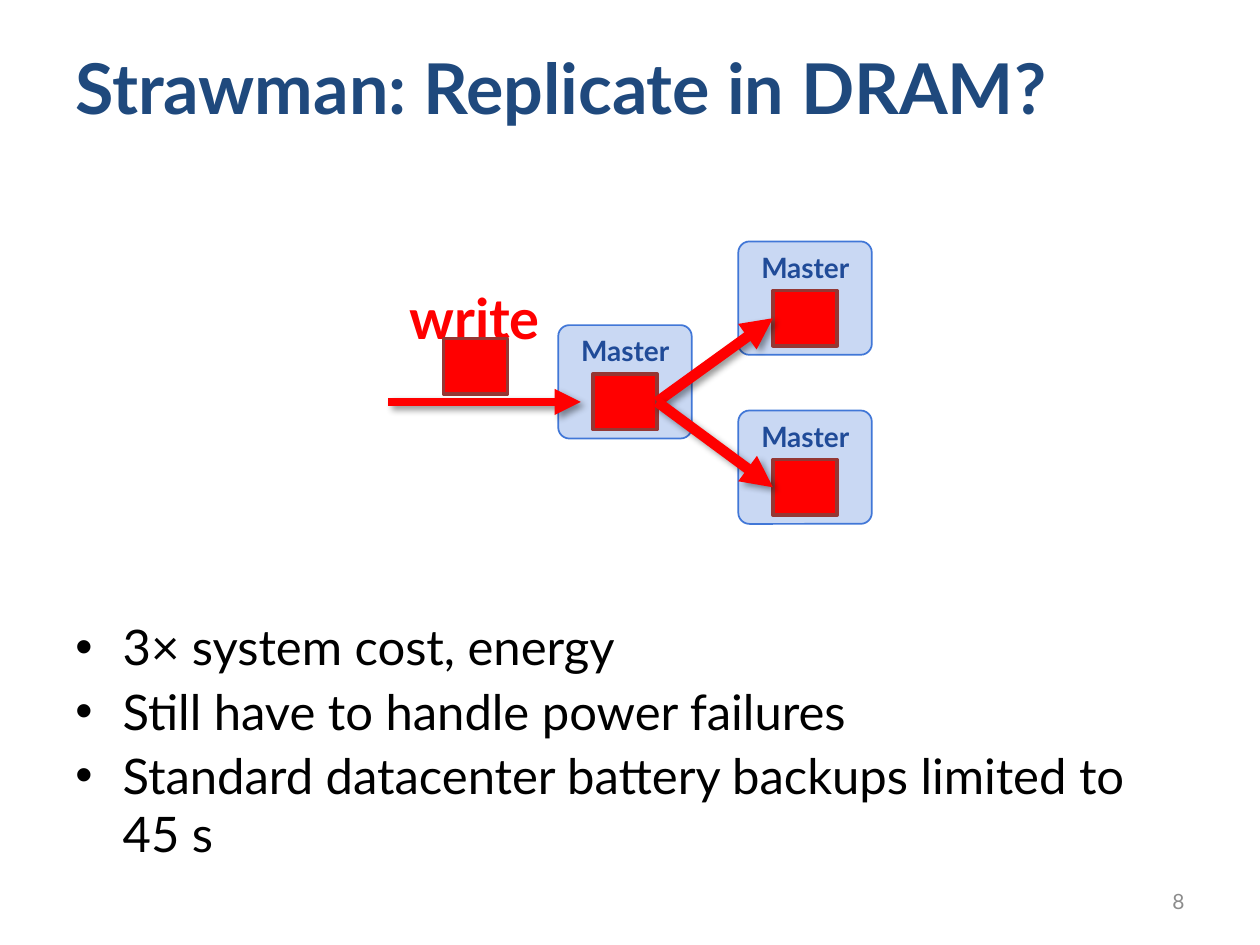
from dataclasses import dataclass

from lxml import etree
from pptx import Presentation
from pptx.dml.color import RGBColor
from pptx.enum.shapes import MSO_CONNECTOR, MSO_SHAPE
from pptx.enum.text import MSO_ANCHOR, PP_ALIGN
from pptx.oxml import parse_xml
from pptx.oxml.ns import nsdecls, qn
from pptx.util import Pt

RECTANGLE, ROUNDED = MSO_SHAPE.RECTANGLE, MSO_SHAPE.ROUNDED_RECTANGLE
STRAIGHT = MSO_CONNECTOR.STRAIGHT
TOP, MIDDLE, BOTTOM = MSO_ANCHOR.TOP, MSO_ANCHOR.MIDDLE, MSO_ANCHOR.BOTTOM
LEFT, CENTER, RIGHT = PP_ALIGN.LEFT, PP_ALIGN.CENTER, PP_ALIGN.RIGHT

FONT = "Lato"
RED, BLOCK_EDGE = "FF0000", "953734"
BLOCK_WIDTH, BLOCK_HEIGHT = 36.7, 31.7
BULLETS = [
    "3× system cost, energy",
    "Still have to handle power failures",
    "Standard datacenter battery backups limited to 45 s",
]
SHADOW = (
    f'<a:effectLst {nsdecls("a")}><a:outerShdw blurRad="50800" dist="38100" '
    'dir="2700000" algn="tl" rotWithShape="0"><a:srgbClr val="000000">'
    '<a:alpha val="40000"/></a:srgbClr></a:outerShdw></a:effectLst>'
)


@dataclass(frozen=True)
class Box:
    left: float
    top: float
    width: float
    height: float

    def lengths(self) -> list:
        return [Pt(value) for value in (self.left, self.top, self.width, self.height)]

    def left_middle(self) -> tuple:
        return self.left, self.top + self.height / 2

    def right_middle(self) -> tuple:
        return self.left + self.width, self.top + self.height / 2


@dataclass(frozen=True)
class TextStyle:
    size: float
    color: str
    bold: bool = False
    align: PP_ALIGN = LEFT
    anchor: MSO_ANCHOR = TOP
    wrap: bool = True


MASTER_STYLE = TextStyle(16, "204B98", bold=True, align=CENTER, wrap=False)


def rgb(color: str) -> RGBColor:
    return RGBColor.from_string(color)


def add_text(slide, box: Box, lines: list, style: TextStyle):
    text_frame = slide.shapes.add_textbox(*box.lengths()).text_frame
    text_frame.text = "\n".join(lines)
    text_frame.word_wrap = style.wrap
    text_frame.vertical_anchor = style.anchor
    for paragraph in text_frame.paragraphs:
        paragraph.alignment = style.align
        for run in paragraph.runs:
            run.font.name = FONT
            run.font.size = Pt(style.size)
            run.font.bold = style.bold
            run.font.color.rgb = rgb(style.color)
    return text_frame


def add_bullet(paragraph) -> None:
    paragraph.space_before = Pt(3)
    properties = paragraph._p.get_or_add_pPr()
    properties.set("marL", str(Pt(27)))
    properties.set("indent", str(Pt(-27)))
    etree.SubElement(properties, qn("a:buFont")).set("typeface", "Arial")
    etree.SubElement(properties, qn("a:buChar")).set("char", "•")


def add_box(slide, kind, box: Box, fill: str, edge: str, weight: float):
    shape = slide.shapes.add_shape(kind, *box.lengths())
    shape.shadow.inherit = False
    shape.fill.solid()
    shape.fill.fore_color.rgb = rgb(fill)
    shape.line.color.rgb = rgb(edge)
    shape.line.width = Pt(weight)
    return shape


def add_block(slide, left: float, top: float) -> Box:
    block = Box(left, top, BLOCK_WIDTH, BLOCK_HEIGHT)
    add_box(slide, RECTANGLE, block, RED, BLOCK_EDGE, 2)
    return block


def add_master(slide, left: float, top: float) -> Box:
    """Draw a labelled server and return the box of its data block."""
    server = Box(left, top, 76.3, 64.8)
    shape = add_box(slide, ROUNDED, server, "C9D8F3", "4177D7", 1)
    shape.adjustments[0] = 0.098
    add_text(slide, Box(left + 4.8, top + 1.5, 67, 26.6), ["Master"], MASTER_STYLE)
    return add_block(slide, left + 19.8, top + 28)


def add_arrow(slide, start: tuple, end: tuple, weight: float) -> None:
    points = [Pt(value) for value in (*start, *end)]
    connector = slide.shapes.add_connector(STRAIGHT, *points)
    connector.line.color.rgb = rgb(RED)
    connector.line.width = Pt(weight)
    line = connector.line._get_or_add_ln()
    etree.SubElement(line, qn("a:tailEnd")).set("type", "triangle")
    connector._element.spPr.append(parse_xml(SHADOW))


def main() -> None:
    presentation = Presentation()
    presentation.slide_width, presentation.slide_height = Pt(720), Pt(540)
    slide = presentation.slides.add_slide(presentation.slide_layouts[6])

    # Title, bullets and slide number
    add_text(slide, Box(36, 21.6, 648, 56.2), ["Strawman: Replicate in DRAM?"],
             TextStyle(40, "1F497D", bold=True, anchor=MIDDLE))
    body = add_text(slide, Box(36, 90, 648, 420), BULLETS,
                    TextStyle(28, "000000", anchor=BOTTOM))
    body.margin_bottom = Pt(17)
    for paragraph in body.paragraphs:
        add_bullet(paragraph)
    add_text(slide, Box(516, 500.4, 168, 28.8), ["8"],
             TextStyle(12, "8C8C8C", align=RIGHT, anchor=MIDDLE))

    # Incoming write
    add_text(slide, Box(226.8, 158.4, 90, 46), ["write"],
             TextStyle(32, RED, bold=True, wrap=False))
    add_block(slide, 253.4, 193.5)
    source = add_master(slide, 319, 185.8)
    add_arrow(slide, (221.8, 229.7), (331.9, 229.7), 5)

    # Replication to the other masters
    replicas = [add_master(slide, 421.9, top) for top in (138, 234.6)]
    for replica in replicas:
        add_arrow(slide, source.right_middle(), replica.left_middle(), 6)

    presentation.save("out.pptx")


if __name__ == "__main__":
    main()
